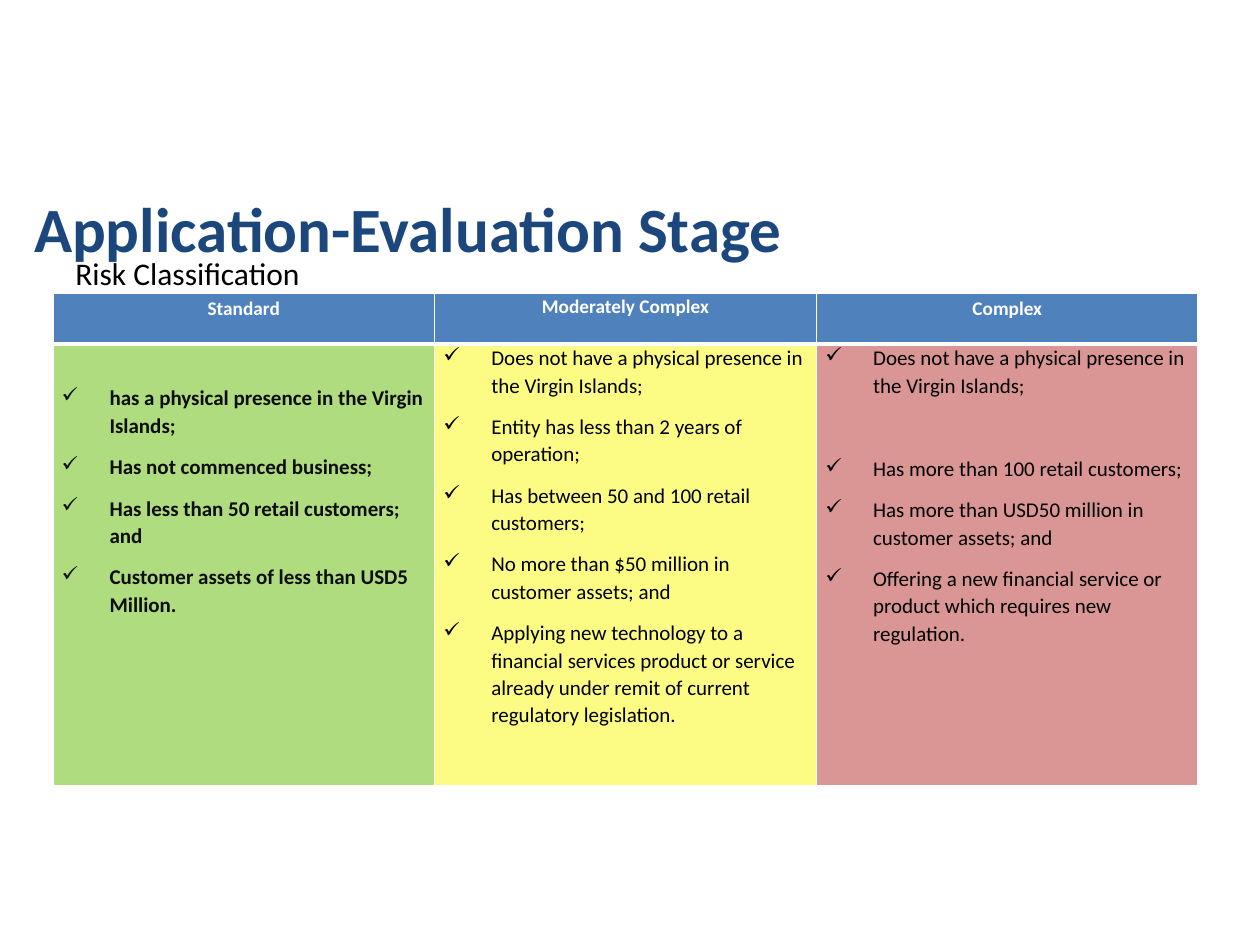
from pptx import Presentation
from pptx.dml.color import RGBColor
from pptx.enum.text import MSO_ANCHOR, MSO_AUTO_SIZE, PP_ALIGN
from pptx.oxml.ns import qn
from pptx.util import Inches, Pt
from lxml.etree import SubElement

# Content
TITLE = "Application-Evaluation Stage"
SUBTITLE = "Risk Classification"
RISK_CLASSES = [
    dict(name="Standard", fill="AFDC7E", color="0D0D0D", bold=True, top=0.32,
         criteria=["has a physical presence in the Virgin Islands;",
                   "Has not commenced business;",
                   "Has less than 50 retail customers; and",
                   "Customer assets of less than USD5 Million."]),
    dict(name="Moderately Complex", fill="FCFC84", color="000000", bold=False, top=0,
         criteria=["Does not have a physical presence in the Virgin Islands;",
                   "Entity has less than 2 years of operation;",
                   "Has between 50 and 100 retail customers;",
                   "No more than $50 million in customer assets; and",
                   "Applying new technology to a financial services product or service "
                   "already under remit of current regulatory legislation."]),
    dict(name="Complex", fill="D99694", color="000000", bold=False, top=0,
         criteria=["Does not have a physical presence in the Virgin Islands;",
                   "Has more than 100 retail customers;",
                   "Has more than USD50 million in customer assets; and",
                   "Offering a new financial service or product which requires new regulation."],
         gap_before=1),
]
HEADER_SPACING = {"Moderately Complex": 1.07}
HEADER_FILL = "4F81BD"
WHITE = "FFFFFF"
ROW_HEIGHTS = [0.4, 3.51]
COLUMN_WIDTH = 3.03


def rgb(value):
    return RGBColor.from_string(value)


def style(paragraph, size, color, bold=False):
    font = paragraph.font
    font.name, font.size, font.bold = "Calibri", Pt(size), bold
    font.color.rgb = rgb(color)


def add_check(paragraph):
    properties = paragraph._p.get_or_add_pPr()
    properties.set("marL", str(Inches(0.38)))
    properties.set("indent", str(-Inches(0.38)))
    SubElement(properties, qn("a:buChar")).set("char", "✓")


def format_cell(cell, fill, bottom_line, top=0):
    cell.margin_left = cell.margin_right = Inches(0.07)
    cell.margin_top, cell.margin_bottom = Inches(top), 0
    properties = cell._tc.get_or_add_tcPr()
    for side, width in (("L", 1), ("R", 1), ("T", 1), ("B", bottom_line)):
        line = SubElement(properties, qn(f"a:ln{side}"), w=str(Pt(width)))
        solid = SubElement(line, qn("a:solidFill"))
        SubElement(solid, qn("a:srgbClr"), val=WHITE)
    cell.fill.solid()
    cell.fill.fore_color.rgb = rgb(fill)


presentation = Presentation()
presentation.slide_width, presentation.slide_height = Inches(10), Inches(7.5)
slide = presentation.slides.add_slide(presentation.slide_layouts[5])

# Title
title = slide.shapes.title
title.left, title.top, title.width, title.height = map(Inches, (0.17, 1.5, 9, 0.6))
title.text_frame.text = TITLE
title.text_frame.auto_size = MSO_AUTO_SIZE.NONE
title.text_frame.vertical_anchor = MSO_ANCHOR.MIDDLE
heading = title.text_frame.paragraphs[0]
heading.alignment = PP_ALIGN.LEFT
style(heading, 36, "1C477D", bold=True)

# Risk table
table = slide.shapes.add_table(
    len(ROW_HEIGHTS), len(RISK_CLASSES), Inches(0.42), Inches(2.33),
    Inches(COLUMN_WIDTH * len(RISK_CLASSES)), Inches(sum(ROW_HEIGHTS))).table
table.horz_banding = False
for row, height in zip(table.rows, ROW_HEIGHTS):
    row.height = Inches(height)

for column, risk in enumerate(RISK_CLASSES):
    table.columns[column].width = Inches(COLUMN_WIDTH)

    header = table.cell(0, column)
    format_cell(header, HEADER_FILL, bottom_line=3)
    header.text = risk["name"]
    label = header.text_frame.paragraphs[0]
    label.alignment = PP_ALIGN.CENTER
    label.line_spacing = HEADER_SPACING.get(risk["name"], 1.15)
    style(label, 11, WHITE, bold=True)

    body = table.cell(1, column)
    format_cell(body, risk["fill"], bottom_line=1, top=risk["top"])
    body.text = "\n".join(risk["criteria"])
    for index, criterion in enumerate(body.text_frame.paragraphs):
        add_check(criterion)
        criterion.line_spacing = 1.07
        criterion.space_after = Pt(8)
        if index == risk.get("gap_before"):
            criterion.space_before = Pt(24)
        style(criterion, 12, risk["color"], risk["bold"])

# Subtitle
subtitle = slide.shapes.add_textbox(*map(Inches, (0.5, 1.97, 5.5, 0.4))).text_frame
subtitle.word_wrap = True
subtitle.text = SUBTITLE
style(subtitle.paragraphs[0], 18, "000000")

presentation.save("out.pptx")
